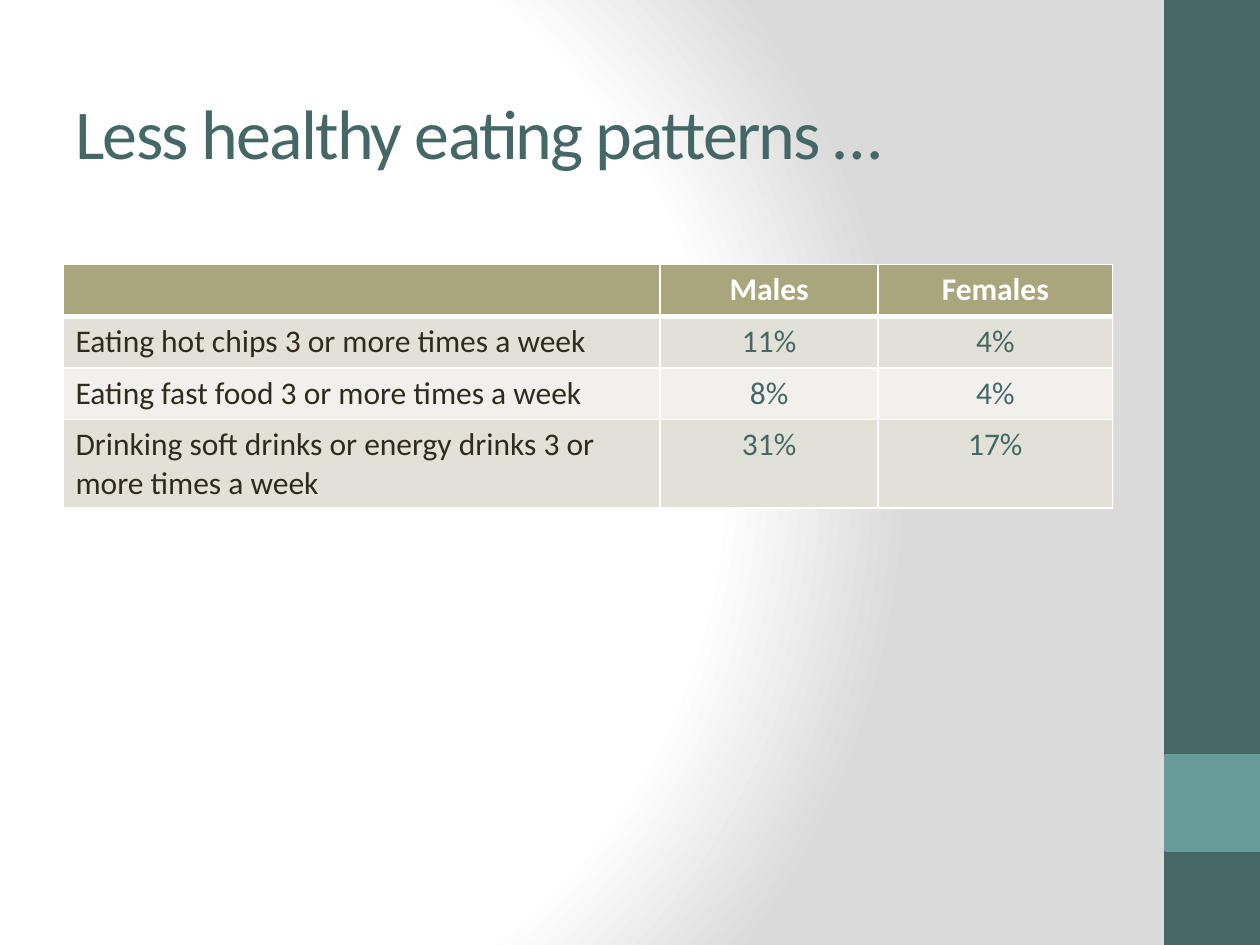
from typing import NamedTuple

from pptx import Presentation
from pptx.dml.color import RGBColor
from pptx.enum import shapes, text
from pptx.oxml import parse_xml
from pptx.oxml.ns import nsdecls
from pptx.util import Inches, Pt

FONT = "Calibri"
TEAL, LIGHT_TEAL = "456867", "689C9A"
WHITE, INK = "FFFFFF", "2F2B20"
OLIVE = "A9A57C"
BANDS = ("E2E1D7", "F1F0EC")


class Block(NamedTuple):
    top: float
    height: float
    color: str


class Habit(NamedTuple):
    label: str
    males: str
    females: str


SIDEBAR = (Block(0, 7.5, TEAL), Block(6, 0.75, LIGHT_TEAL))
HEADER = Habit("", "Males", "Females")
HABITS = (
    Habit("Eating hot chips 3 or more times a week", "11%", "4%"),
    Habit("Eating fast food 3 or more times a week", "8%", "4%"),
    Habit("Drinking soft drinks or energy drinks 3 or more times a week", "31%", "17%"),
)
COLUMN_WIDTHS = (4.74, 1.73, 1.86)
ROW_HEIGHT = 0.41


def rgb(color: str) -> RGBColor:
    return RGBColor.from_string(color)


def add_run(p, words: str, size: float, color: str, bold: bool = False):
    r = p.add_run()
    r.text = words
    r.font.name = FONT
    r.font.size = Pt(size)
    r.font.bold = bold
    r.font.color.rgb = rgb(color)
    return r


def set_background(s) -> None:
    """Fill the slide with a radial gradient, white turning grey at the right."""
    stops = "".join(
        f'<a:gs pos="{pos * 1000}"><a:srgbClr val="{color}"/></a:gs>'
        for pos, color in ((0, WHITE), (75, WHITE), (100, "DADADA"))
    )
    bg = parse_xml(
        f'<p:bg {nsdecls("p", "a")}><p:bgPr><a:gradFill rotWithShape="1">'
        f'<a:gsLst>{stops}</a:gsLst><a:path path="circle">'
        '<a:fillToRect l="20000" t="50000" r="100000" b="50000"/></a:path>'
        "</a:gradFill><a:effectLst/></p:bgPr></p:bg>"
    )
    s.element.cSld.insert(0, bg)


def add_block(s, block: Block) -> None:
    sp = s.shapes.add_shape(
        shapes.MSO_SHAPE.RECTANGLE,
        Inches(9.25), Inches(block.top), Inches(0.75), Inches(block.height),
    )
    sp.shadow.inherit = False
    sp.fill.solid()
    sp.fill.fore_color.rgb = rgb(block.color)
    sp.line.color.rgb = rgb(block.color)
    sp.line.width = Pt(2)


def add_title(s, words: str) -> None:
    sp = s.shapes.add_textbox(Inches(0.5), Inches(0.3), Inches(8.33), Inches(1.48))
    tf = sp.text_frame
    tf.word_wrap = True
    tf.vertical_anchor = text.MSO_ANCHOR.MIDDLE
    r = add_run(tf.paragraphs[0], words, 40, TEAL)
    r.font._element.set("spc", "-100")


def set_borders(cell, top: float = 1, bottom: float = 1) -> None:
    """Give the cell white edges, with widths in points."""
    tc_pr = cell._tc.get_or_add_tcPr()
    for side, width in (("L", 1), ("R", 1), ("T", top), ("B", bottom)):
        tc_pr.append(parse_xml(
            f'<a:ln{side} {nsdecls("a")} w="{Pt(width)}"><a:solidFill>'
            f'<a:srgbClr val="{WHITE}"/></a:solidFill></a:ln{side}>'
        ))


def add_habit_table(s) -> None:
    rows = (HEADER, *HABITS)
    table = s.shapes.add_table(
        len(rows), len(COLUMN_WIDTHS), Inches(0.5), Inches(2.1),
        Inches(sum(COLUMN_WIDTHS)), Inches(ROW_HEIGHT * len(rows)),
    ).table
    for column, width in zip(table.columns, COLUMN_WIDTHS):
        column.width = Inches(width)
    for i, habit in enumerate(rows):
        table.rows[i].height = Inches(ROW_HEIGHT)
        is_header = i == 0
        fill = OLIVE if is_header else BANDS[(i - 1) % 2]
        for j, words in enumerate(habit):
            cell = table.cell(i, j)
            set_borders(cell, top=3 if i == 1 else 1, bottom=3 if is_header else 1)
            cell.fill.solid()
            cell.fill.fore_color.rgb = rgb(fill)
            if not words:
                continue
            p = cell.text_frame.paragraphs[0]
            if j > 0:
                p.alignment = text.PP_ALIGN.CENTER
            color = WHITE if is_header else TEAL if j > 0 else INK
            add_run(p, words, 18, color, bold=is_header)


def main() -> None:
    prs = Presentation()
    prs.slide_width, prs.slide_height = Inches(10), Inches(7.5)
    s = prs.slides.add_slide(prs.slide_layouts[6])
    set_background(s)
    for block in SIDEBAR:
        add_block(s, block)
    add_title(s, "Less healthy eating patterns …")
    add_habit_table(s)
    prs.save("out.pptx")


if __name__ == "__main__":
    main()
